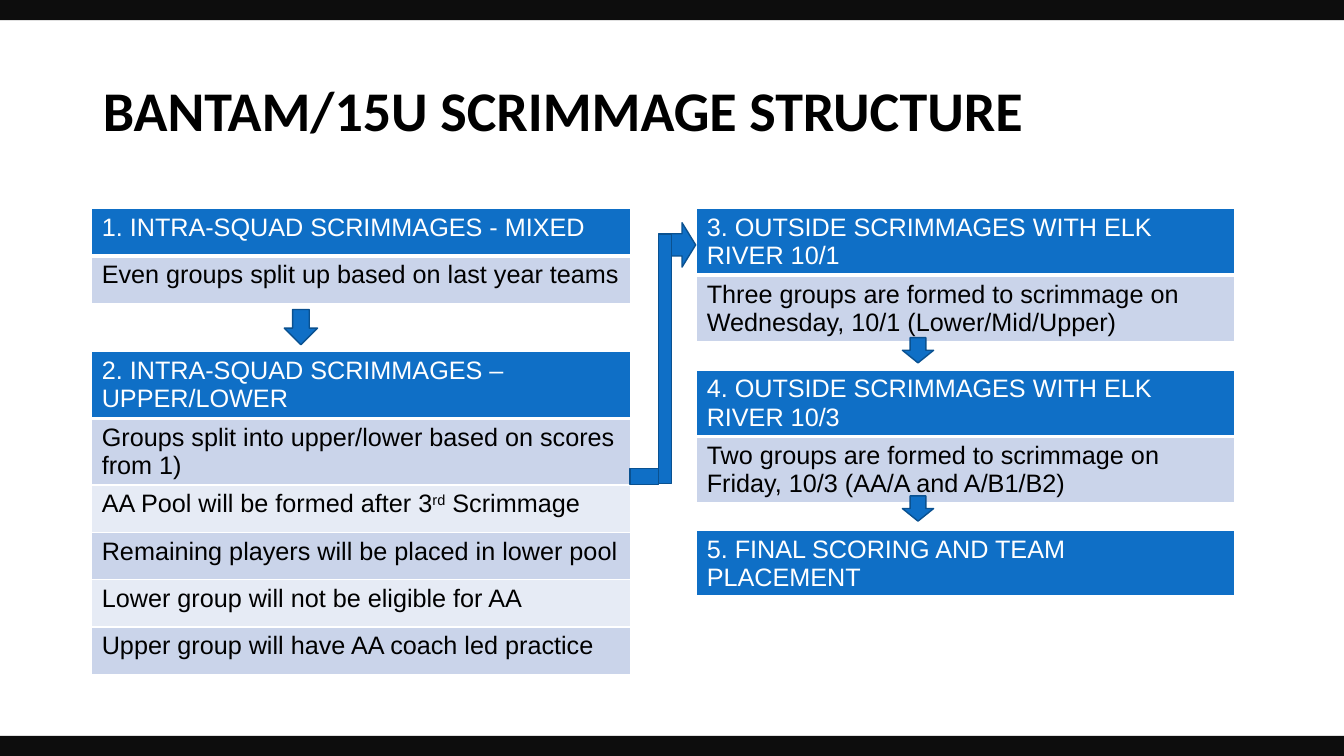
from lxml.etree import SubElement
from pptx import Presentation
from pptx.dml.color import RGBColor
from pptx.enum.shapes import MSO_SHAPE as Shape
from pptx.enum.text import MSO_ANCHOR as Anchor, PP_ALIGN as Align
from pptx.oxml.ns import qn
from pptx.util import Inches, Pt

COLORS = {
    "blue": "0F6FC6", "outline": "0A5190", "band": "CAD4EA",
    "light": "E6EBF5", "white": "FFFFFF", "black": "000000", "bar": "0D0D0D",
}
TITLE_FONT = {"name": "Calibri", "size": Pt(40), "bold": True}
TABLE_FONT = {"name": "Arial", "size": Pt(18), "bold": False}
SLIDE_WIDTH, SLIDE_HEIGHT = 13.33, 7.5
COLUMN_WIDTH, ROW_HEIGHT = 5.34, 0.47
LEFT, RIGHT = 0.91, 6.91

# Left, top and rows of each step; a row is a list of (text, is superscript)
STEPS = [
    (LEFT, 2.07, [
        [("1. INTRA-SQUAD SCRIMMAGES - MIXED", False)],
        [("Even groups split up based on last year teams", False)],
    ]),
    (LEFT, 3.49, [
        [("2. INTRA-SQUAD SCRIMMAGES – UPPER/LOWER", False)],
        [("Groups split into upper/lower based on scores from 1)", False)],
        [("AA Pool will be formed after 3", False), ("rd", True), (" Scrimmage", False)],
        [("Remaining players will be placed in lower pool", False)],
        [("Lower group will not be eligible for AA", False)],
        [("Upper group will have AA coach led practice", False)],
    ]),
    (RIGHT, 2.07, [
        [("3. OUTSIDE SCRIMMAGES WITH ELK RIVER 10/1", False)],
        [("Three groups are formed to scrimmage on Wednesday, 10/1 (Lower/Mid/Upper)", False)],
    ]),
    (RIGHT, 3.67, [
        [("4. OUTSIDE SCRIMMAGES WITH ELK RIVER 10/3", False)],
        [("Two groups are formed to scrimmage on Friday, 10/3 (AA/A and A/B1/B2)", False)],
    ]),
    (RIGHT, 5.26, [[("5. FINAL SCORING AND TEAM PLACEMENT", False)]]),
]


def color(name):
    return RGBColor.from_string(COLORS[name])


def format_font(font, values, color_name):
    for name, value in values.items():
        setattr(font, name, value)
    font.color.rgb = color(color_name)


def add_title(page, text, left, top, width, height):
    title = page.shapes.title
    box = {"left": left, "top": top, "width": width, "height": height}
    for name, value in box.items():
        setattr(title, name, Inches(value))
    frame = title.text_frame
    frame.word_wrap = True
    frame.vertical_anchor = Anchor.MIDDLE
    para = frame.paragraphs[0]
    para.alignment = Align.LEFT
    para.line_spacing = 0.9
    span = para.add_run()
    span.text = text
    format_font(span.font, TITLE_FONT, "black")


def add_borders(cell, bottom_width):
    """Put white borders before the fill, as the schema orders them."""
    properties = cell._tc.get_or_add_tcPr()
    widths = {"a:lnL": 1, "a:lnR": 1, "a:lnT": 1, "a:lnB": bottom_width}
    for position, (tag, width) in enumerate(widths.items()):
        line = SubElement(properties, qn(tag), w=str(Pt(width)))
        fill = SubElement(line, qn("a:solidFill"))
        SubElement(fill, qn("a:srgbClr"), val=COLORS["white"])
        properties.insert(position, line)


def add_step(page, left, top, rows):
    frame = page.shapes.add_table(
        len(rows), 1, Inches(left), Inches(top),
        Inches(COLUMN_WIDTH), Inches(ROW_HEIGHT * len(rows)))
    for index, spans in enumerate(rows):
        is_header = index == 0
        cell = frame.table.cell(index, 0)
        cell.fill.solid()
        fill_name = "blue" if is_header else "band" if index % 2 else "light"
        cell.fill.fore_color.rgb = color(fill_name)
        add_borders(cell, 3 if is_header else 1)
        para = cell.text_frame.paragraphs[0]
        for text, is_superscript in spans:
            span = para.add_run()
            span.text = text
            format_font(span.font, TABLE_FONT, "white" if is_header else "black")
            if is_superscript:
                span._r.get_or_add_rPr().set("baseline", "30000")


def add_block(page, kind, left, top, width, height, fill="blue", outline="outline"):
    block = page.shapes.add_shape(
        kind, Inches(left), Inches(top), Inches(width), Inches(height))
    block.shadow.inherit = False
    block.fill.solid()
    block.fill.fore_color.rgb = color(fill)
    if outline:
        block.line.color.rgb = color(outline)
        block.line.width = Pt(1)
    else:
        block.line.fill.background()


def add_flow(page):
    # Step 1 to step 2
    add_block(page, Shape.DOWN_ARROW, 2.82, 3.07, 0.33, 0.35)
    # Elbow from step 2 up to step 3
    add_block(page, Shape.RIGHT_ARROW, 6.63, 2.21, 0.27, 0.44)
    add_block(page, Shape.RECTANGLE, 6.53, 2.32, 0.13, 2.48)
    add_block(page, Shape.RECTANGLE, 6.25, 4.65, 0.28, 0.16)
    # Steps 3 to 4 and 4 to 5
    for top in (3.35, 4.92):
        add_block(page, Shape.DOWN_ARROW, 8.95, top, 0.31, 0.25)


def add_bars(page, height):
    for top in (0, SLIDE_HEIGHT - height):
        add_block(page, Shape.RECTANGLE, 0, top, SLIDE_WIDTH, height, "bar", None)


def main():
    deck = Presentation()
    deck.slide_width, deck.slide_height = Inches(SLIDE_WIDTH), Inches(SLIDE_HEIGHT)
    page = deck.slides.add_slide(deck.slide_layouts[5])
    add_title(page, "BANTAM/15U SCRIMMAGE STRUCTURE", 0.92, 0.4, 11.5, 1.45)
    for left, top, rows in STEPS:
        add_step(page, left, top, rows)
    add_flow(page)
    add_bars(page, 0.2)
    deck.save("out.pptx")


if __name__ == "__main__":
    main()
